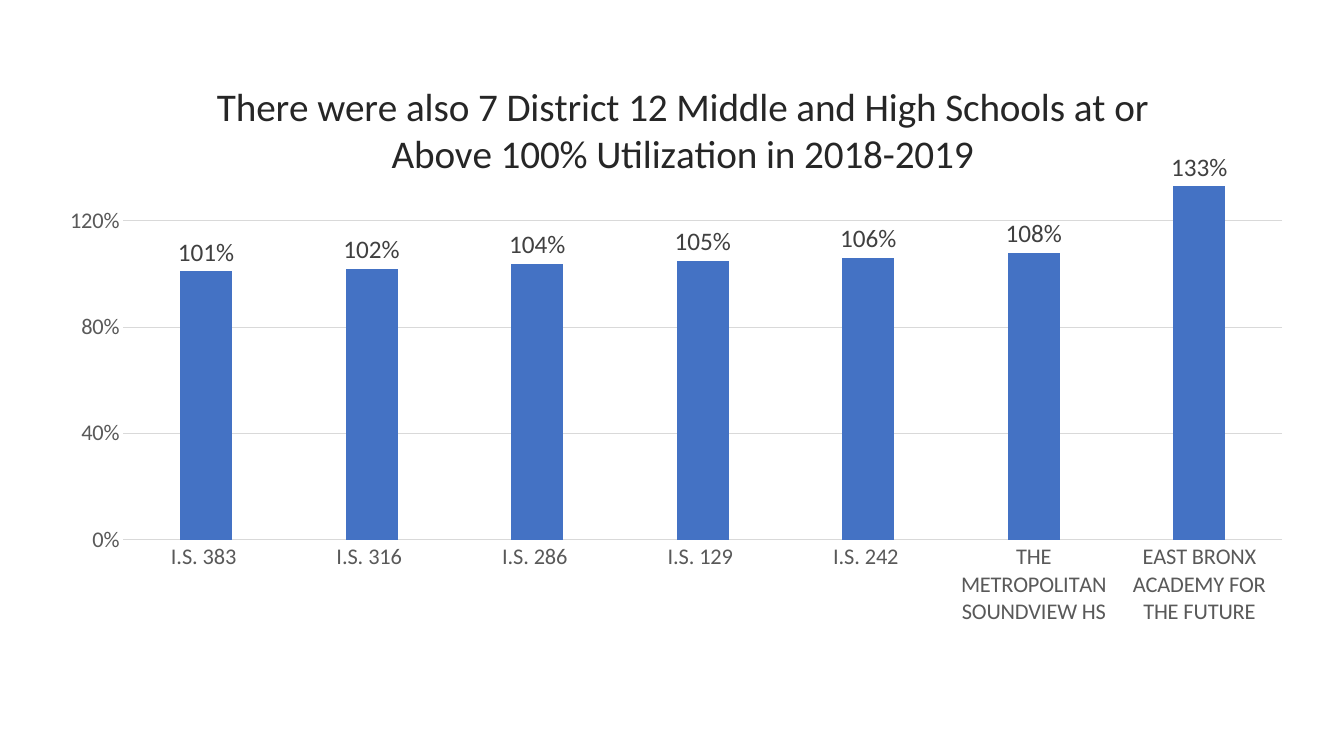
from dataclasses import dataclass

import pptx
import pptx.chart.data
import pptx.dml.color
import pptx.enum.chart
import pptx.oxml
import pptx.oxml.ns
import pptx.util
from pptx.util import Cm


@dataclass(frozen=True)
class Theme:
    font: str = "Calibri"
    title_color: str = "262626"
    label_color: str = "404040"
    axis_color: str = "595959"
    grid_color: str = "D9D9D9"
    bar_color: str = "4472C4"
    title_size: float = 28
    label_size: float = 18
    axis_size: float = 16
    line_width: float = 0.75


THEME = Theme()
TITLE = (
    "There were also 7 District 12 Middle and High Schools at or "
    "Above 100% Utilization in 2018-2019"
)
UTILIZATION = {
    "I.S. 383 ": 1.01,
    "I.S. 316 ": 1.02,
    "I.S. 286 ": 1.04,
    "I.S. 129 ": 1.05,
    "I.S. 242 ": 1.06,
    "THE METROPOLITAN SOUNDVIEW HS": 1.08,
    "EAST BRONX ACADEMY FOR THE FUTURE": 1.33,
}


def rgb(color):
    return pptx.dml.color.RGBColor.from_string(color)


def style_font(font, size, color):
    font.name = THEME.font
    font.size = pptx.util.Pt(size)
    font.bold = False
    font.color.rgb = rgb(color)


def style_line(line):
    line.color.rgb = rgb(THEME.grid_color)
    line.width = pptx.util.Pt(THEME.line_width)


def write_text(frame, text, *, size, color):
    para = frame.paragraphs[0]
    span = para.add_run()
    span.text = text
    style_font(para.font, size, color)
    style_font(span.font, size, color)


def set_layout(parent, index, target=None, **places):
    qualified = pptx.oxml.ns.qn
    for old in parent.findall(qualified("c:layout")):
        parent.remove(old)
    settings = {"layoutTarget": target} if target else {}
    settings.update(xMode="edge", yMode="edge", **places)
    parts = "".join(f'<c:{name} val="{value}"/>' for name, value in settings.items())
    namespace = pptx.oxml.ns.nsdecls("c")
    layout = pptx.oxml.parse_xml(
        f"<c:layout {namespace}><c:manualLayout>{parts}</c:manualLayout></c:layout>"
    )
    parent.insert(index, layout)


def add_column_chart(page, utilization, left, top, width, height):
    data = pptx.chart.data.CategoryChartData(number_format="0%")
    data.categories = utilization.keys()
    data.add_series("Series 1", utilization.values())
    kind = pptx.enum.chart.XL_CHART_TYPE.COLUMN_CLUSTERED
    chart = page.shapes.add_chart(kind, left, top, width, height, data).chart
    chart.has_legend = False
    style_font(chart.font, THEME.axis_size, THEME.axis_color)
    plot_area = chart.element.find(".//" + pptx.oxml.ns.qn("c:plotArea"))
    set_layout(plot_area, 0, target="inner", x=0.05, y=0.186, w=0.937, h=0.552)
    return chart


def style_title(chart, text):
    chart.has_title = True
    title = chart.chart_title
    write_text(title.text_frame, text, size=THEME.title_size, color=THEME.title_color)
    title.include_in_layout = False
    set_layout(title.element, 1, x=0.12, y=0.045)


def style_columns(plot):
    plot.vary_by_categories = False
    plot.gap_width = 219
    plot.overlap = -27
    fill = plot.series[0].format.fill
    fill.solid()
    fill.fore_color.rgb = rgb(THEME.bar_color)
    plot.has_data_labels = True
    labels = plot.data_labels
    labels.show_value = True
    labels.position = pptx.enum.chart.XL_LABEL_POSITION.OUTSIDE_END
    labels.number_format = "0%"
    labels.number_format_is_linked = False
    style_font(labels.font, THEME.label_size, THEME.label_color)


def style_axes(category_axis, value_axis):
    for axis in (category_axis, value_axis):
        axis.major_tick_mark = pptx.enum.chart.XL_TICK_MARK.NONE
        axis.minor_tick_mark = pptx.enum.chart.XL_TICK_MARK.NONE
        style_font(axis.tick_labels.font, THEME.axis_size, THEME.axis_color)
    category_axis.has_major_gridlines = False
    style_line(category_axis.format.line)
    value_axis.format.line.fill.background()
    value_axis.minimum_scale = 0
    value_axis.maximum_scale = 1.4
    value_axis.major_unit = 0.4
    value_axis.has_major_gridlines = True
    style_line(value_axis.major_gridlines.format.line)
    value_axis.tick_labels.number_format = "0%"
    value_axis.tick_labels.number_format_is_linked = False


def main():
    deck = pptx.Presentation()
    deck.slide_width, deck.slide_height = Cm(33.87), Cm(19.05)
    page = deck.slides.add_slide(deck.slide_layouts[6])
    chart = add_column_chart(page, UTILIZATION, Cm(1.55), Cm(1.07), Cm(31.17), Cm(16.99))
    style_title(chart, TITLE)
    style_columns(chart.plots[0])
    style_axes(chart.category_axis, chart.value_axis)
    deck.save("out.pptx")


if __name__ == "__main__":
    main()
